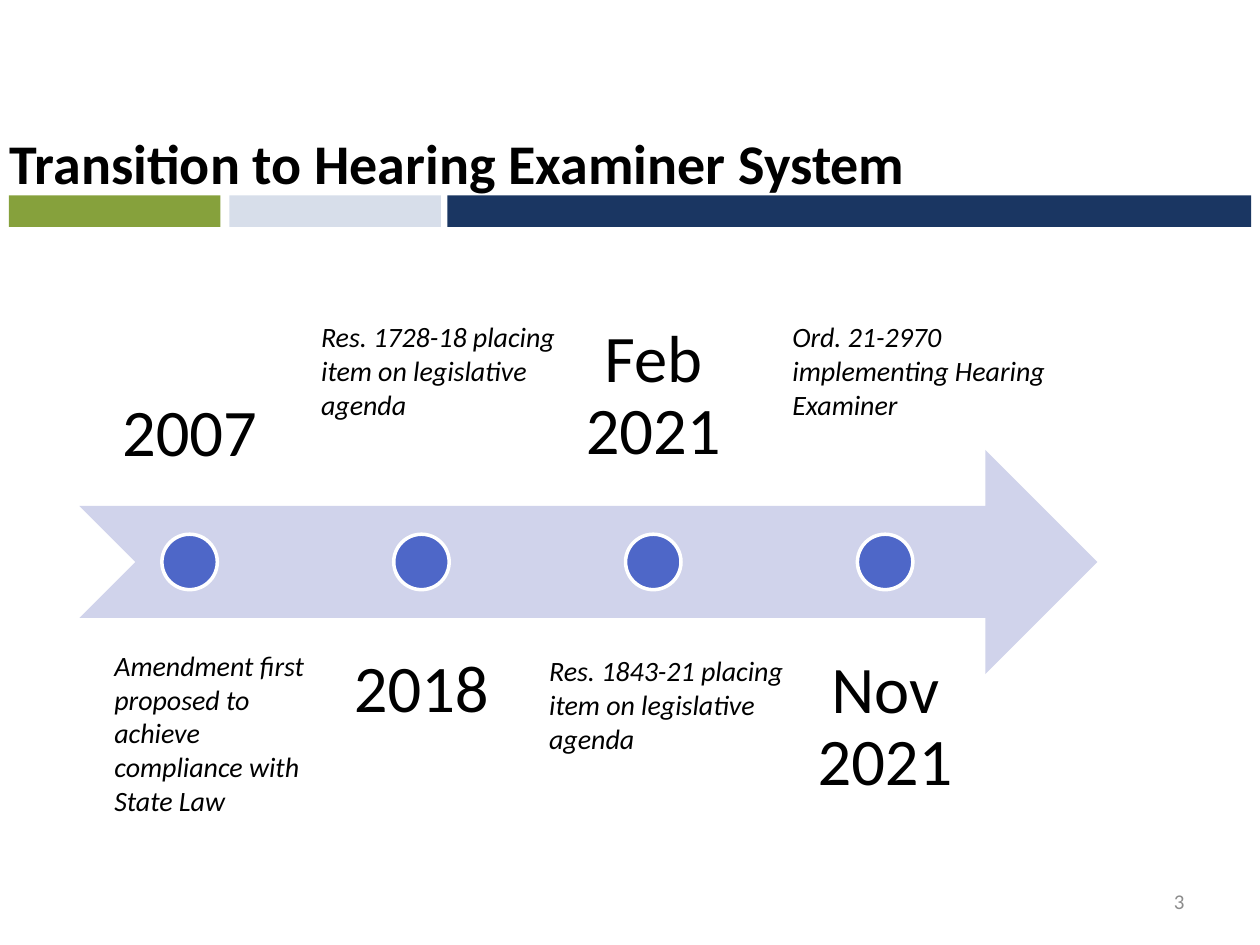
from dataclasses import dataclass

from pptx import Presentation
from pptx.dml.color import RGBColor
from pptx.enum.shapes import MSO_SHAPE as Shape
from pptx.enum.text import MSO_ANCHOR as Anchor, PP_ALIGN as Align
from pptx.util import Inches, Pt


@dataclass(frozen=True)
class Theme:
    font: str = "Calibri"
    text: str = "000000"
    muted: str = "8C8C8C"
    navy: str = "1A3662"
    green: str = "86A13C"
    pale: str = "D7DEEA"
    arrow: str = "D0D3EB"
    dot: str = "4E67C8"
    dot_edge: str = "FFFFFF"
    title_size: int = 32
    year_size: int = 38
    note_size: int = 16
    number_size: int = 12


@dataclass(frozen=True)
class Box:
    left: float
    top: float
    width: float
    height: float

    def lengths(self) -> list:
        return [Inches(v) for v in (self.left, self.top, self.width, self.height)]


@dataclass(frozen=True)
class Milestone:
    date: str
    note: str
    note_box: Box


THEME = Theme()
TIMELINE_LEFT, STEP = 0.63, 1.84
YEAR_WIDTH, YEAR_HEIGHT, YEAR_INSET = 1.75, 1.78, 0.3
YEAR_ABOVE, YEAR_BELOW = 2.24, 4.91
DOT_TOP, DOT_SIZE = 4.24, 0.44

MILESTONES = [
    Milestone("2007", "Amendment first proposed to achieve compliance with State Law",
              Box(0.81, 5.1, 1.83, 1.75)),
    Milestone("2018", "Res. 1728-18 placing item on legislative agenda",
              Box(2.45, 2.49, 2.22, 1.21)),
    Milestone("Feb 2021", "Res. 1843-21 placing item on legislative agenda",
              Box(4.26, 5.14, 2.22, 1.21)),
    Milestone("Nov 2021", "Ord. 21-2970 implementing Hearing Examiner",
              Box(6.19, 2.49, 2.22, 1.21)),
]


def add_filled(page, kind: Shape, box: Box, fill: str, edge: str | None = None):
    shape = page.shapes.add_shape(kind, *box.lengths())
    shape.shadow.inherit = False
    shape.fill.solid()
    shape.fill.fore_color.rgb = RGBColor.from_string(fill)
    if edge:
        shape.line.color.rgb = RGBColor.from_string(edge)
        shape.line.width = Pt(2)
    else:
        shape.line.fill.background()
    return shape


def add_text(page, text: str, box: Box, size: int, color: str = THEME.text,
             bold: bool = False, italic: bool = False, align: Align = Align.LEFT,
             anchor: Anchor = Anchor.TOP, inset: float | None = None):
    frame = page.shapes.add_textbox(*box.lengths()).text_frame
    frame.word_wrap = True
    frame.vertical_anchor = anchor
    if inset is not None:
        frame.margin_left = frame.margin_right = Inches(inset)
        frame.margin_top = frame.margin_bottom = Inches(inset)
    para = frame.paragraphs[0]
    para.text = text
    para.alignment = align
    font = para.font
    font.name, font.size = THEME.font, Pt(size)
    font.bold, font.italic = bold, italic
    font.color.rgb = RGBColor.from_string(color)
    return para


def add_milestone(page, index: int, item: Milestone) -> None:
    above = index % 2 == 0
    left = TIMELINE_LEFT + index * STEP
    year = add_text(page, item.date,
                    Box(left, YEAR_ABOVE if above else YEAR_BELOW, YEAR_WIDTH, YEAR_HEIGHT),
                    THEME.year_size, align=Align.CENTER,
                    anchor=Anchor.BOTTOM if above else Anchor.TOP, inset=YEAR_INSET)
    year.line_spacing = 0.9
    dot_left = left + (YEAR_WIDTH - DOT_SIZE) / 2
    add_filled(page, Shape.OVAL, Box(dot_left, DOT_TOP, DOT_SIZE, DOT_SIZE),
               THEME.dot, THEME.dot_edge)
    add_text(page, item.note, item.note_box, THEME.note_size, italic=True)


def main() -> None:
    deck = Presentation()
    deck.slide_width, deck.slide_height = Inches(10), Inches(7.5)
    page = deck.slides.add_slide(deck.slide_layouts[6])

    # Colour bar under the title
    for left, width, color in ((0.07, 1.68, THEME.green), (1.82, 1.68, THEME.pale),
                               (3.55, 6.38, THEME.navy)):
        add_filled(page, Shape.RECTANGLE, Box(left, 1.55, width, 0.25), color)

    # Title and page number
    add_text(page, "Transition to Hearing Examiner System", Box(-0.02, 0.97, 8.55, 1.19),
             THEME.title_size, bold=True)
    add_text(page, "3", Box(7.17, 6.95, 2.33, 0.4), THEME.number_size, THEME.muted,
             align=Align.RIGHT, anchor=Anchor.MIDDLE)

    # Timeline
    add_filled(page, Shape.NOTCHED_RIGHT_ARROW, Box(TIMELINE_LEFT, 3.57, 8.08, 1.78),
               THEME.arrow)
    for index, item in enumerate(MILESTONES):
        add_milestone(page, index, item)

    deck.save("out.pptx")


if __name__ == "__main__":
    main()
